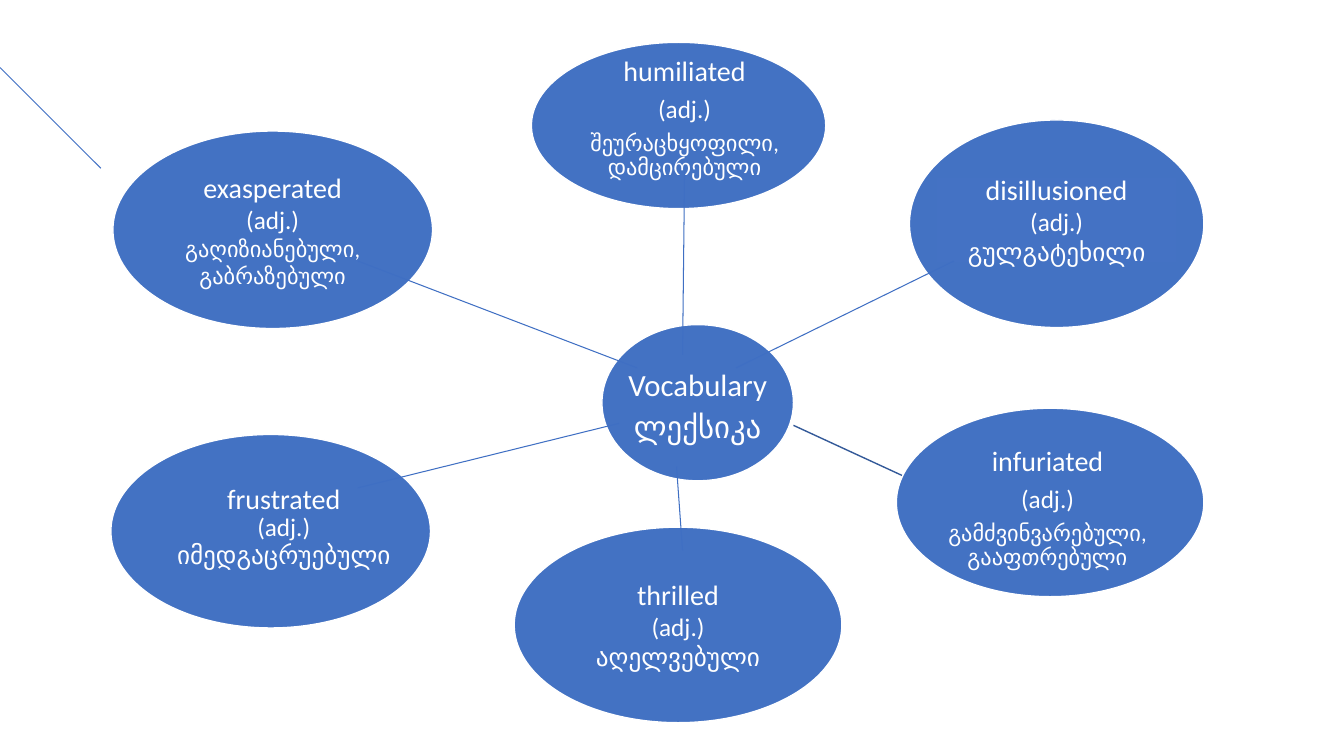
from dataclasses import dataclass
from typing import Optional

import pptx
import pptx.dml.color
import pptx.enum.shapes
import pptx.enum.text
import pptx.oxml.ns
import pptx.util
from lxml import etree

Inches = pptx.util.Inches
Points = pptx.util.Pt
Shapes = pptx.enum.shapes.MSO_SHAPE
Frame = tuple[float, float, float, float]

WHITE = "FFFFFF"
BUBBLE_BLUE = "4372C3"
LABEL_BLUE = "4472C4"
SPOKE_BLUE = "3F6FC3"
DARK_BLUE = "345A99"


@dataclass
class Bubble:
    oval: Frame
    lines: list[tuple[str, int]]
    label: Optional[Frame] = None  # without it the text sits in the oval
    label_fill: Optional[str] = None
    line_spacing: Optional[float] = None
    space_before: float = 0


@dataclass
class Spoke:
    start: tuple[float, float]
    end: tuple[float, float]
    color: str = SPOKE_BLUE
    width: float = 0.75


def word(english: str, georgian: str, size: int) -> list[tuple[str, int]]:
    return [(english, 20), ("(adj.)", 18), (georgian, size)]


HUB = Bubble((5.97, 3.22, 1.9, 1.55), [("Vocabulary", 22), ("ლექსიკა", 22)],
             (6.16, 3.52, 1.52, 1.04), line_spacing=0.9, space_before=6)
HUMILIATED = Bubble((5.27, 0.42, 2.92, 1.65),
                    word("humiliated", "შეურაცხყოფილი, დამცირებული", 16),
                    (5.36, 0.67, 2.86, 1.02), line_spacing=0.9, space_before=6.3)
DISILLUSIONED = Bubble((9.02, 1.19, 2.92, 2.06),
                       word("disillusioned", "გულგატეხილი", 18),
                       (9.29, 1.76, 2.38, 0.84), label_fill=LABEL_BLUE)
THRILLED = Bubble((5.1, 5.23, 3.25, 1.94), word("thrilled", "აღელვებული", 18))
FRUSTRATED = Bubble((1.1, 4.31, 3.17, 1.92),
                    word("frustrated", "იმედგაცრუებული", 18),
                    (1.66, 4.81, 2.31, 0.84), line_spacing=0.9)
INFURIATED = Bubble((8.89, 4.05, 3.05, 1.87),
                    word("infuriated", "გამძვინვარებული, გააფთრებული", 16),
                    (9.29, 4.63, 2.2, 0.84), line_spacing=0.9, space_before=6.3)
EXASPERATED = Bubble((1.12, 1.3, 3.17, 1.96),
                     word("exasperated", "გაღიზიანებული, გაბრაზებული", 16))

# Back to front
PARTS = [
    HUB, HUMILIATED, DISILLUSIONED, THRILLED, FRUSTRATED,
    Spoke((9.17, 4.82), (7.87, 4.22), DARK_BLUE, 1),
    INFURIATED, EXASPERATED,
    Spoke((6.14, 4.2), (3.55, 4.84)),
    Spoke((6.32, 3.65), (3.55, 2.59)),
    Spoke((7.3, 3.65), (9.46, 2.59)),
    Spoke((6.71, 4.63), (6.77, 5.46)),
    Spoke((0, 0.67), (1, 1.67)),
    Spoke((6.77, 3.52), (6.79, 1.69)),
]


def rgb(value: str) -> pptx.dml.color.RGBColor:
    return pptx.dml.color.RGBColor.from_string(value)


def apply_format(target, values: dict) -> None:
    for name, value in values.items():
        setattr(target, name, value)


def write_text(shape, bubble: Bubble, inset: float) -> None:
    frame = shape.text_frame
    margins = {f"margin_{side}": Inches(inset)
               for side in ("left", "top", "right", "bottom")}
    apply_format(frame, {
        "word_wrap": True,
        "vertical_anchor": pptx.enum.text.MSO_ANCHOR.MIDDLE,
        **margins,
    })
    for index, (text, size) in enumerate(bubble.lines):
        para = frame.add_paragraph() if index else frame.paragraphs[0]
        para.alignment = pptx.enum.text.PP_ALIGN.CENTER
        if bubble.line_spacing:
            para.line_spacing = bubble.line_spacing
        if index and bubble.space_before:
            para.space_before = Points(bubble.space_before)
        span = para.add_run()
        span.text = text
        apply_format(span.font, {"name": "Calibri", "size": Points(size)})
        span.font.color.rgb = rgb(WHITE)


def add_filled(page, kind, frame: Frame, fill: str):
    shape = page.shapes.add_shape(kind, *map(Inches, frame))
    shape.shadow.inherit = False
    shape.fill.solid()
    shape.fill.fore_color.rgb = rgb(fill)
    shape.line.fill.background()
    return shape


def draw_bubble(page, bubble: Bubble) -> None:
    oval = add_filled(page, Shapes.OVAL, bubble.oval, BUBBLE_BLUE)
    oval.line.color.rgb = rgb(WHITE)
    oval.line.width = Points(1)
    if bubble.label is None:
        write_text(oval, bubble, 0.1)
        return
    if bubble.label_fill:
        box = add_filled(page, Shapes.RECTANGLE, bubble.label, bubble.label_fill)
    else:
        box = page.shapes.add_textbox(*map(Inches, bubble.label))
    write_text(box, bubble, 0.01)


def draw_spoke(page, spoke: Spoke) -> None:
    line = page.shapes.add_connector(pptx.enum.shapes.MSO_CONNECTOR.STRAIGHT,
                                     *map(Inches, spoke.start + spoke.end))
    line.line.color.rgb = rgb(spoke.color)
    line.line.width = Points(spoke.width)
    properties = line._element.spPr
    etree.SubElement(properties, pptx.oxml.ns.qn("a:effectLst"))


def main() -> None:
    deck = pptx.Presentation()
    apply_format(deck, {"slide_width": Inches(13.33), "slide_height": Inches(7.5)})
    page = deck.slides.add_slide(deck.slide_layouts[6])
    for part in PARTS:
        if isinstance(part, Bubble):
            draw_bubble(page, part)
        else:
            draw_spoke(page, part)
    deck.save("out.pptx")


if __name__ == "__main__":
    main()
